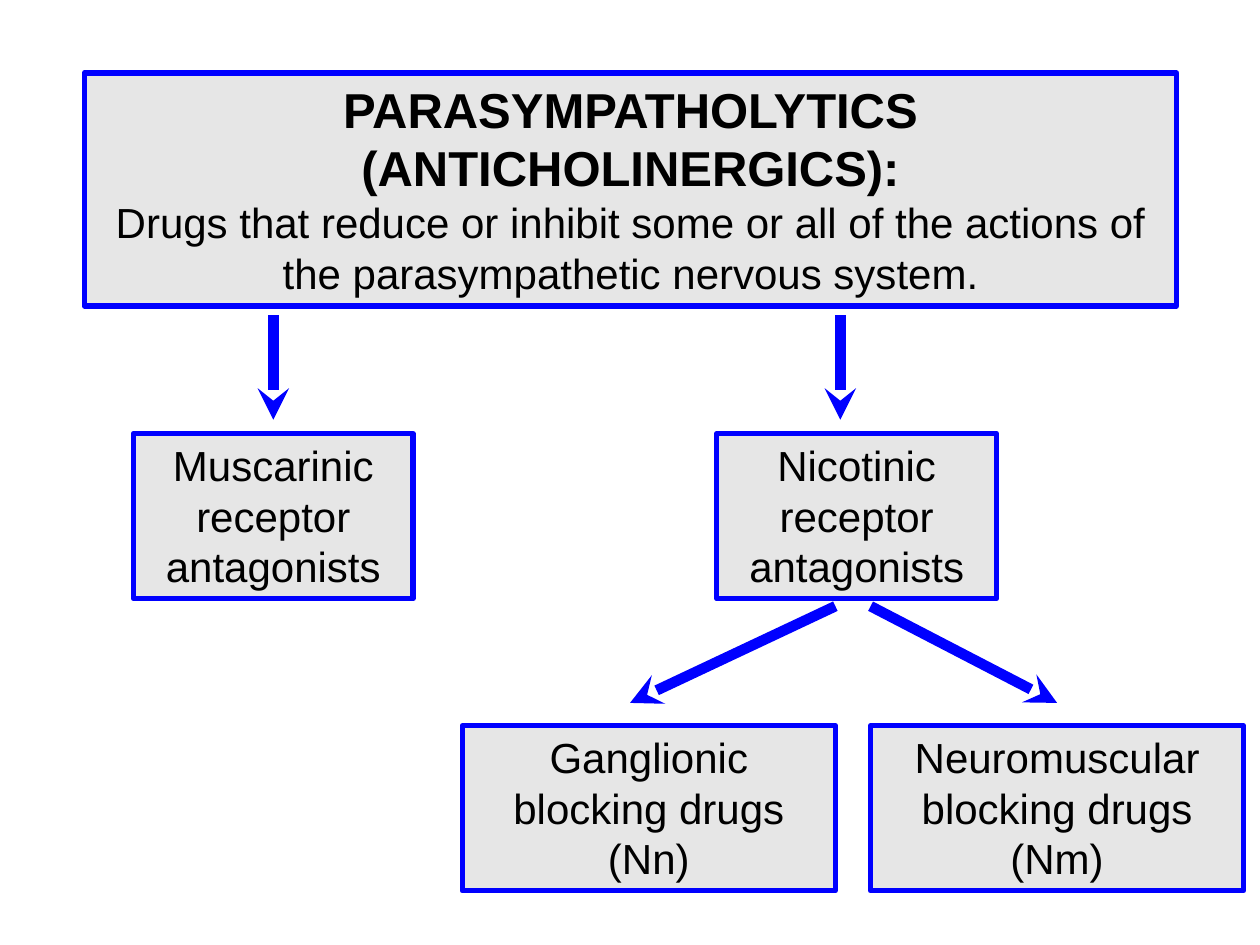
from dataclasses import dataclass

from lxml import etree
from pptx import Presentation
from pptx.dml.color import RGBColor
from pptx.enum import shapes, text
from pptx.oxml import ns
from pptx.slide import Slide
from pptx.util import Cm, Pt


@dataclass(frozen=True)
class Theme:
    font: str = "Arial"
    fill: RGBColor = RGBColor(0xE6, 0xE6, 0xE6)
    line: RGBColor = RGBColor(0x00, 0x00, 0xFF)
    ink: RGBColor = RGBColor(0x00, 0x00, 0x00)
    heading: int = 28
    body: int = 24
    border: int = 3
    arrow: int = 6


@dataclass(frozen=True)
class Box:
    left: float
    top: float
    width: float
    height: float
    body: str
    heading: str = ""


@dataclass(frozen=True)
class Arrow:
    x1: float
    y1: float
    x2: float
    y2: float


THEME = Theme()

RECEPTOR = {"top": 8.74, "width": 5.64, "height": 3.33}
BLOCKER = {"top": 14.63, "width": 7.52, "height": 3.33}
BOXES = [
    Box(1.7, 1.47, 22.02, 4.7,
        "Drugs that reduce or inhibit some or all of the actions of "
        "the parasympathetic nervous system.",
        heading="PARASYMPATHOLYTICS (ANTICHOLINERGICS):"),
    Box(left=2.69, body="Muscarinic receptor antagonists", **RECEPTOR),
    Box(left=14.45, body="Nicotinic receptor antagonists", **RECEPTOR),
    Box(left=9.32, body="Ganglionic blocking drugs (Nn)", **BLOCKER),
    Box(left=17.55, body="Neuromuscular blocking drugs (Nm)", **BLOCKER),
]
ARROWS = [
    Arrow(5.51, 6.35, 5.51, 8.46),
    Arrow(16.94, 6.35, 16.94, 8.46),
    Arrow(16.84, 12.22, 12.7, 14.17),
    Arrow(17.55, 12.22, 21.31, 14.17),
]


def draw_box(slide: Slide, box: Box) -> None:
    panel = slide.shapes.add_shape(
        shapes.MSO_SHAPE.RECTANGLE,
        Cm(box.left), Cm(box.top), Cm(box.width), Cm(box.height))
    panel.shadow.inherit = False
    panel.fill.solid()
    panel.fill.fore_color.rgb = THEME.fill
    panel.line.color.rgb = THEME.line
    panel.line.width = Pt(THEME.border)

    frame = panel.text_frame
    frame_format = {
        "word_wrap": True,
        "auto_size": text.MSO_AUTO_SIZE.SHAPE_TO_FIT_TEXT,
        "vertical_anchor": text.MSO_ANCHOR.TOP,
    }
    for name, value in frame_format.items():
        setattr(frame, name, value)

    wording = [(box.heading, THEME.heading, True), (box.body, THEME.body, False)]
    paragraph = frame.paragraphs[0]
    for words, size, bold in wording:
        if not words:
            continue
        if paragraph.runs:
            paragraph = frame.add_paragraph()
        paragraph.alignment = text.PP_ALIGN.CENTER
        run = paragraph.add_run()
        run.text = words
        font_format = {"name": THEME.font, "size": Pt(size), "bold": bold}
        for name, value in font_format.items():
            setattr(run.font, name, value)
        run.font.color.rgb = THEME.ink


def draw_arrow(slide: Slide, arrow: Arrow) -> None:
    connector = slide.shapes.add_connector(
        shapes.MSO_CONNECTOR.STRAIGHT,
        Cm(arrow.x1), Cm(arrow.y1), Cm(arrow.x2), Cm(arrow.y2))
    connector.line.color.rgb = THEME.line
    connector.line.width = Pt(THEME.arrow)
    etree.SubElement(connector.get_or_add_ln(), ns.qn("a:tailEnd"), type="stealth")
    etree.SubElement(connector.element.spPr, ns.qn("a:effectLst"))


def main() -> None:
    deck = Presentation()
    deck.slide_width, deck.slide_height = Cm(25.4), Cm(19.05)
    slide = deck.slides.add_slide(deck.slide_layouts[6])
    for box in BOXES:
        draw_box(slide, box)
    for arrow in ARROWS:
        draw_arrow(slide, arrow)
    deck.save("out.pptx")


if __name__ == "__main__":
    main()
